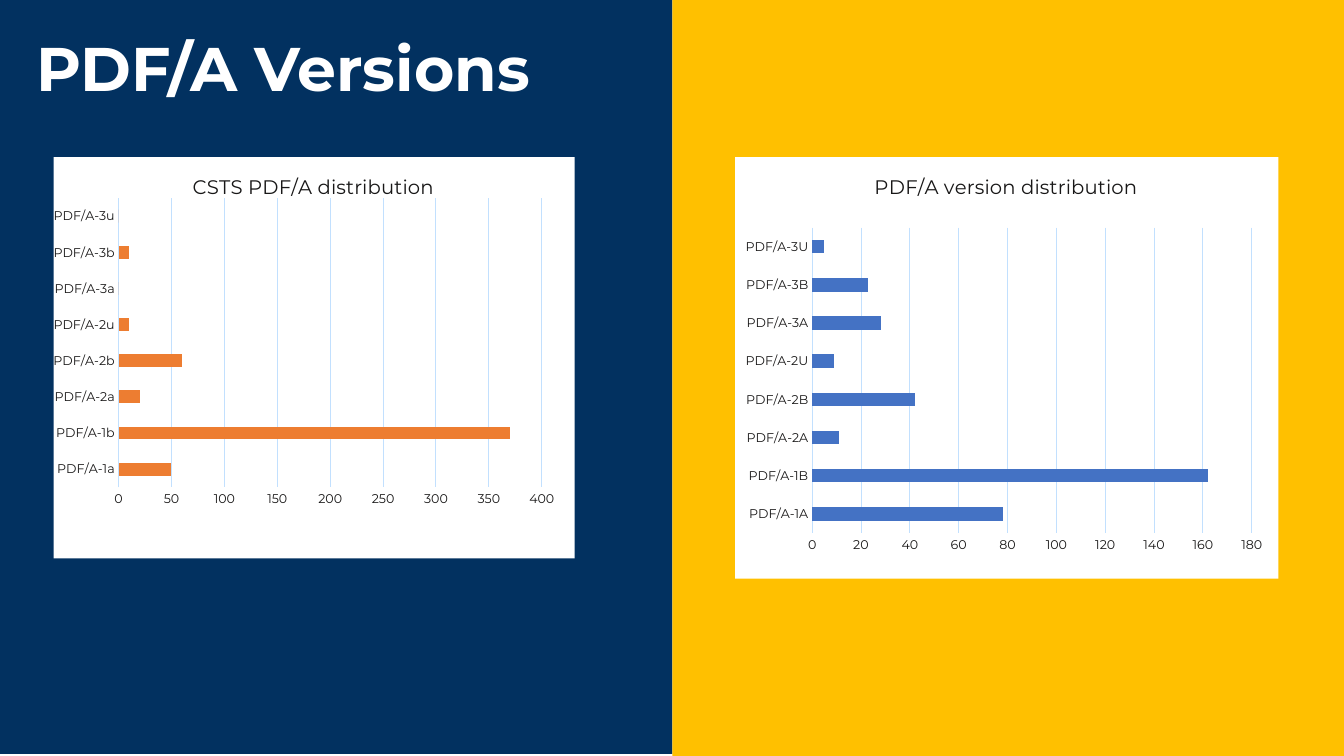
from lxml import etree
from pptx import Presentation
from pptx.chart.data import CategoryChartData
from pptx.dml.color import RGBColor
from pptx.enum.chart import XL_CHART_TYPE, XL_TICK_MARK
from pptx.enum.shapes import MSO_SHAPE
from pptx.oxml import parse_xml
from pptx.oxml.ns import nsdecls, qn
from pptx.util import Inches, Pt

BAR = XL_CHART_TYPE.BAR_CLUSTERED
NO_TICK = XL_TICK_MARK.NONE
RECT = MSO_SHAPE.RECTANGLE
NAVY = RGBColor(0x02, 0x31, 0x60)
GOLD = RGBColor(0xFF, 0xC0, 0x00)
WHITE = RGBColor(0xFF, 0xFF, 0xFF)
INK = RGBColor(0x18, 0x17, 0x17)
GRID = RGBColor(0xC2, 0xE0, 0xFE)
ORANGE = RGBColor(0xED, 0x7D, 0x31)
BLUE = RGBColor(0x44, 0x72, 0xC4)
FONT = "Montserrat"


def write(text, tf, size, color, bold=False):
    p = tf.paragraphs[0]
    r = p.add_run()
    r.text = text
    r.font.name = FONT
    r.font.size = Pt(size)
    r.font.bold = bold
    r.font.color.rgb = color
    return p


def set_layout(parent, position, **values):
    for old in parent.findall(qn("c:layout")):
        parent.remove(old)
    layout = etree.Element(qn("c:layout"))
    manual = etree.SubElement(layout, qn("c:manualLayout"))
    for tag, val in values.items():
        etree.SubElement(manual, qn("c:" + tag)).set("val", str(val))
    parent.insert(position, layout)


prs = Presentation()
prs.slide_width, prs.slide_height = Inches(13.33), Inches(7.5)
s = prs.slides.add_slide(prs.slide_layouts[6])

for left, top, color in ((0, -0.02, NAVY), (6.67, 0, GOLD)):
    sp = s.shapes.add_shape(RECT, Inches(left), Inches(top), Inches(6.67), Inches(7.5))
    sp.shadow.inherit = False
    sp.fill.solid()
    sp.fill.fore_color.rgb = color
    sp.line.fill.background()

levels = ["1a", "1b", "2a", "2b", "2u", "3a", "3b", "3u"]
charts = [
    ("CSTS PDF/A distribution", (0.53, 1.56, 5.17, 3.98), ORANGE,
     [f"PDF/A-{v}" for v in levels], [50, 370, 20, 60, 10, 0, 10, 0],
     400, 50, (0.125, 0.102, 0.812, 0.721), (0.26, 0.03)),
    ("PDF/A version distribution", (7.29, 1.56, 5.39, 4.18), BLUE,
     [f"PDF/A-{v.upper()}" for v in levels], [78, 162, 11, 42, 9, 28, 23, 5],
     180, 20, (0.142, 0.167, 0.809, 0.725), (0.25, 0.03)),
]
for title, box, color, cats, vals, top, step, plot_box, title_at in charts:
    data = CategoryChartData()
    data.categories = cats
    data.add_series("Series 1", vals)
    chart = s.shapes.add_chart(BAR, *[Inches(v) for v in box], data).chart
    chart.has_legend = False
    chart.font.name = FONT
    chart.font.size = Pt(10)
    chart.font.color.rgb = INK

    write(title, chart.chart_title.text_frame, 14, INK)
    chart.chart_title.include_in_layout = False
    x, y = title_at
    set_layout(chart.chart_title._element, 1, xMode="edge", yMode="edge", x=x, y=y)

    x, y, w, h = plot_box
    set_layout(chart._chartSpace.chart.plotArea, 0, layoutTarget="inner",
               xMode="edge", yMode="edge", x=x, y=y, w=w, h=h)
    chart._chartSpace.chart.addnext(parse_xml(
        f'<c:spPr {nsdecls("c", "a")}><a:solidFill><a:srgbClr val="{WHITE}"/>'
        '</a:solidFill><a:ln><a:noFill/></a:ln></c:spPr>'))

    plot = chart.plots[0]
    plot.gap_width = 182
    plot.vary_by_categories = False
    plot.series[0].invert_if_negative = False
    fill = plot.series[0].format.fill
    fill.solid()
    fill.fore_color.rgb = color

    cat_axis, val_axis = chart.category_axis, chart.value_axis
    for axis in (cat_axis, val_axis):
        axis.major_tick_mark = axis.minor_tick_mark = NO_TICK
        font = axis.tick_labels.font
        font.name = FONT
        font.size = Pt(9)
        font.color.rgb = INK
    val_axis.minimum_scale = 0
    val_axis.maximum_scale = top
    val_axis.major_unit = step
    val_axis.has_major_gridlines = True
    val_axis.format.line.fill.background()
    for line in (cat_axis.format.line, val_axis.major_gridlines.format.line):
        line.color.rgb = GRID
        line.width = Pt(0.75)

tb = s.shapes.add_textbox(Inches(0.26), Inches(0.33), Inches(12.42), Inches(1.85))
tb.text_frame.word_wrap = True
p = write("PDF/A Versions", tb.text_frame, 44, WHITE, bold=True)
p.line_spacing = 0.9

prs.save("out.pptx")
